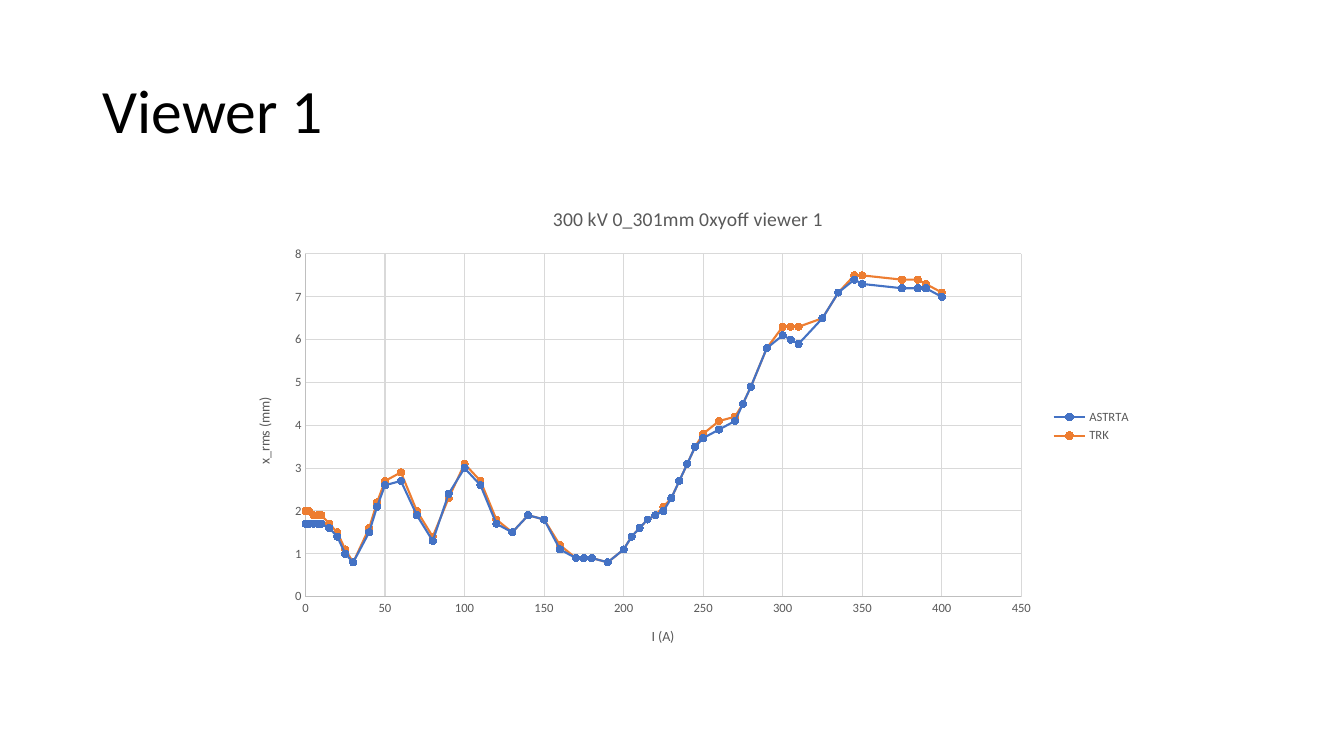
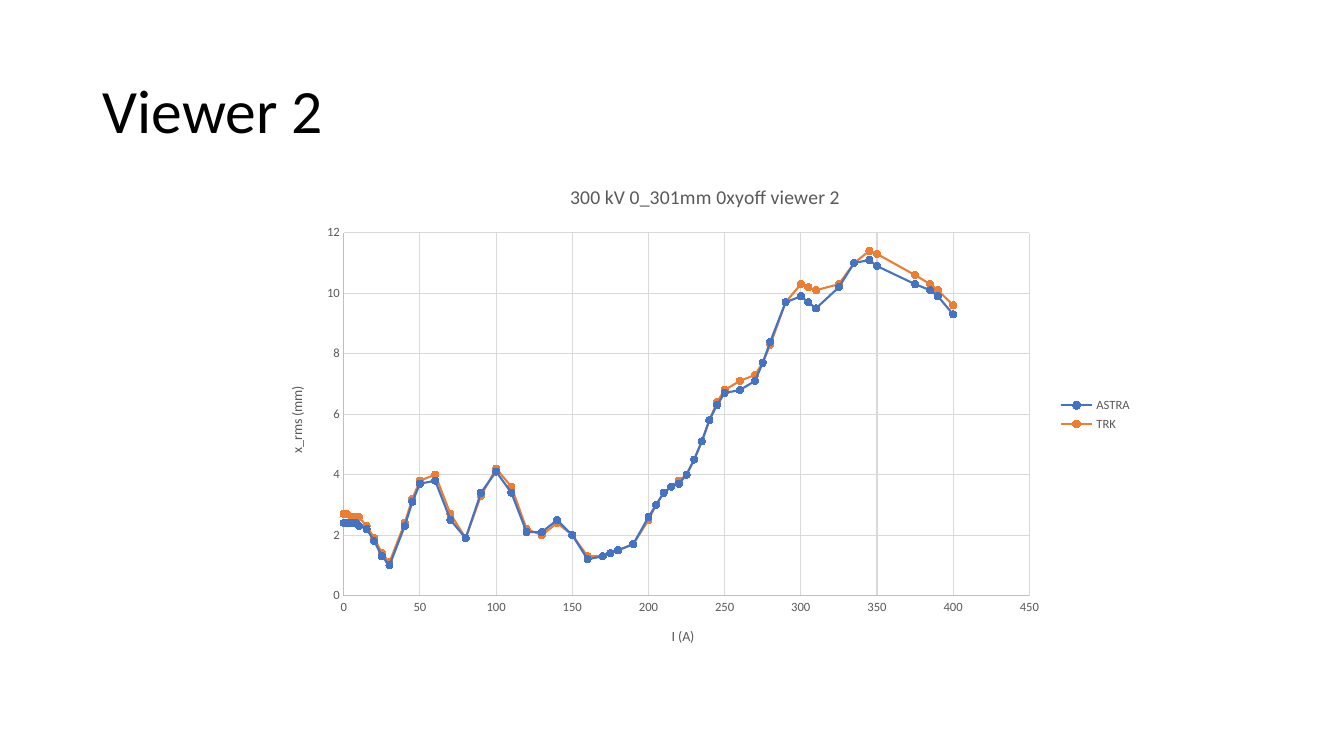
from lxml import etree
from pptx import Presentation
from pptx.chart.data import XyChartData
from pptx.dml.color import RGBColor
from pptx.enum.chart import (XL_CHART_TYPE, XL_LEGEND_POSITION, XL_MARKER_STYLE,
                             XL_TICK_LABEL_POSITION, XL_TICK_MARK)
from pptx.enum.text import MSO_ANCHOR, PP_ALIGN
from pptx.oxml.ns import qn
from pptx.util import Inches, Pt

FONT = "Calibri"
BLACK = RGBColor(0x00, 0x00, 0x00)
GRAY = RGBColor(0x59, 0x59, 0x59)
AXIS_GRAY = RGBColor(0xBF, 0xBF, 0xBF)
GRID_GRAY = RGBColor(0xD9, 0xD9, 0xD9)
BLUE = RGBColor(0x44, 0x72, 0xC4)
ORANGE = RGBColor(0xED, 0x7D, 0x31)
SERIES_COLORS = [BLUE, ORANGE]

CURRENTS = [
    0, 2, 5, 8, 10, 15, 20, 25, 30, 40, 45, 50, 60, 70, 80, 90, 100, 110,
    120, 130, 140, 150, 160, 170, 175, 180, 190, 200, 205, 210, 215, 220,
    225, 230, 235, 240, 245, 250, 260, 270, 275, 280, 290, 300, 305, 310,
    325, 335, 345, 350, 375, 385, 390, 400,
]

# Boxes are left, top, width, height in inches on the slide.
VIEWERS = [
    {
        "title": "Viewer 1",
        "chart_title": "300 kV 0_301mm 0xyoff viewer 1",
        "chart_box": (2.33, 1.85, 8.99, 4.76),
        "plot_box": (3.03, 2.52, 7.1, 3.4),
        "y_max": 8, "y_step": 1,
        "series": {
            "ASTRTA": [
                1.7, 1.7, 1.7, 1.7, 1.7, 1.6, 1.4, 1, 0.8, 1.5, 2.1, 2.6, 2.7, 1.9,
                1.3, 2.4, 3, 2.6, 1.7, 1.5, 1.9, 1.8, 1.1, 0.9, 0.9, 0.9, 0.8, 1.1,
                1.4, 1.6, 1.8, 1.9, 2, 2.3, 2.7, 3.1, 3.5, 3.7, 3.9, 4.1, 4.5, 4.9,
                5.8, 6.1, 6, 5.9, 6.5, 7.1, 7.4, 7.3, 7.2, 7.2, 7.2, 7],
            "TRK": [
                2, 2, 1.9, 1.9, 1.9, 1.7, 1.5, 1.1, 0.8, 1.6, 2.2, 2.7, 2.9, 2,
                1.4, 2.3, 3.1, 2.7, 1.8, 1.5, 1.9, 1.8, 1.2, 0.9, 0.9, 0.9, 0.8, 1.1,
                1.4, 1.6, 1.8, 1.9, 2.1, 2.3, 2.7, 3.1, 3.5, 3.8, 4.1, 4.2, 4.5, 4.9,
                5.8, 6.3, 6.3, 6.3, 6.5, 7.1, 7.5, 7.5, 7.4, 7.4, 7.3, 7.1],
        },
    },
    {
        "title": "Viewer 2",
        "chart_title": "300 kV 0_301mm 0xyoff viewer 2",
        "chart_box": (2.66, 1.63, 8.67, 4.97),
        "plot_box": (3.41, 2.31, 6.8, 3.6),
        "y_max": 12, "y_step": 2,
        "series": {
            "ASTRA": [
                2.4, 2.4, 2.4, 2.4, 2.3, 2.2, 1.8, 1.3, 1, 2.3, 3.1, 3.7, 3.8, 2.5,
                1.9, 3.4, 4.1, 3.4, 2.1, 2.1, 2.5, 2, 1.2, 1.3, 1.4, 1.5, 1.7, 2.6,
                3, 3.4, 3.6, 3.7, 4, 4.5, 5.1, 5.8, 6.3, 6.7, 6.8, 7.1, 7.7, 8.4,
                9.7, 9.9, 9.7, 9.5, 10.2, 11, 11.1, 10.9, 10.3, 10.1, 9.9, 9.3],
            "TRK": [
                2.7, 2.7, 2.6, 2.6, 2.6, 2.3, 1.9, 1.4, 1.1, 2.4, 3.2, 3.8, 4, 2.7,
                1.9, 3.3, 4.2, 3.6, 2.2, 2, 2.4, 2, 1.3, 1.3, 1.4, 1.5, 1.7, 2.5,
                3, 3.4, 3.6, 3.8, 4, 4.5, 5.1, 5.8, 6.4, 6.8, 7.1, 7.3, 7.7, 8.3,
                9.7, 10.3, 10.2, 10.1, 10.3, 11, 11.4, 11.3, 10.6, 10.3, 10.1, 9.6],
        },
    },
]


def set_font(font, size, color):
    font.name = FONT
    font.size = Pt(size)
    font.bold = False
    font.color.rgb = color


def write(frame, text, size=10, color=GRAY, align=None, line_spacing=None):
    frame.text = text
    para = frame.paragraphs[0]
    para.alignment = align
    para.line_spacing = line_spacing
    set_font(para.runs[0].font, size, color)


def set_line(line, color, width):
    line.color.rgb = color
    line.width = Pt(width)


def place_plot(chart, chart_box, plot_box):
    """Fix the inner plot area, given in inches on the slide."""
    left, top, width, height = chart_box
    plot_left, plot_top, plot_width, plot_height = plot_box
    fractions = {"x": (plot_left - left) / width, "y": (plot_top - top) / height,
                 "w": plot_width / width, "h": plot_height / height}
    plot_area = chart.element.find(".//" + qn("c:plotArea"))
    for old_layout in plot_area.findall(qn("c:layout")):
        plot_area.remove(old_layout)
    layout = etree.Element(qn("c:layout"))
    manual = etree.SubElement(layout, qn("c:manualLayout"))
    settings = {"layoutTarget": "inner", "xMode": "edge", "yMode": "edge", **fractions}
    for tag, value in settings.items():
        etree.SubElement(manual, qn("c:" + tag)).set("val", str(value))
    plot_area.insert(0, layout)


def format_axis(axis, title, maximum, step):
    axis.minimum_scale, axis.maximum_scale, axis.major_unit = 0, maximum, step
    axis.major_tick_mark = axis.minor_tick_mark = XL_TICK_MARK.NONE
    axis.tick_label_position = XL_TICK_LABEL_POSITION.NEXT_TO_AXIS
    axis.tick_labels.number_format = "General"
    axis.tick_labels.number_format_is_linked = False
    set_font(axis.tick_labels.font, 9, GRAY)
    set_line(axis.format.line, AXIS_GRAY, 0.75)
    axis.has_major_gridlines = True
    set_line(axis.major_gridlines.format.line, GRID_GRAY, 0.75)
    write(axis.axis_title.text_frame, title)


def add_viewer_chart(slide, viewer):
    data = XyChartData()
    for name, sizes in viewer["series"].items():
        series = data.add_series(name)
        for current, size in zip(CURRENTS, sizes):
            series.add_data_point(current, size)
    box = [Inches(length) for length in viewer["chart_box"]]
    chart = slide.shapes.add_chart(XL_CHART_TYPE.XY_SCATTER_SMOOTH, *box, data).chart
    set_font(chart.font, 10, BLACK)
    write(chart.chart_title.text_frame, viewer["chart_title"], size=14)
    chart.chart_title.include_in_layout = False
    chart.has_legend = True
    chart.legend.position = XL_LEGEND_POSITION.RIGHT
    chart.legend.include_in_layout = False
    set_font(chart.legend.font, 9, GRAY)
    format_axis(chart.category_axis, "I (A)", 450, 50)
    format_axis(chart.value_axis, "x_rms (mm)", viewer["y_max"], viewer["y_step"])
    plot = chart.plots[0]
    plot.vary_by_categories = False
    for series, color in zip(plot.series, SERIES_COLORS):
        series.smooth = True
        set_line(series.format.line, color, 1.5)
        series.marker.style = XL_MARKER_STYLE.CIRCLE
        series.marker.size = 5
        series.marker.format.fill.solid()
        series.marker.format.fill.fore_color.rgb = color
        set_line(series.marker.format.line, color, 0.75)
    place_plot(chart, viewer["chart_box"], viewer["plot_box"])


def add_viewer_slide(deck, layout, viewer):
    slide = deck.slides.add_slide(layout)
    frame = slide.shapes.title.text_frame
    frame.vertical_anchor = MSO_ANCHOR.MIDDLE
    write(frame, viewer["title"], size=44, color=BLACK, align=PP_ALIGN.LEFT,
          line_spacing=0.9)
    add_viewer_chart(slide, viewer)


def main():
    deck = Presentation()
    deck.slide_width, deck.slide_height = Inches(13.33), Inches(7.5)
    layout = deck.slide_layouts.get_by_name("Title Only")
    title = layout.placeholders[0]
    title.left, title.top = Inches(0.92), Inches(0.4)
    title.width, title.height = Inches(11.5), Inches(1.45)
    for viewer in VIEWERS:
        add_viewer_slide(deck, layout, viewer)
    deck.save("out.pptx")


if __name__ == "__main__":
    main()
